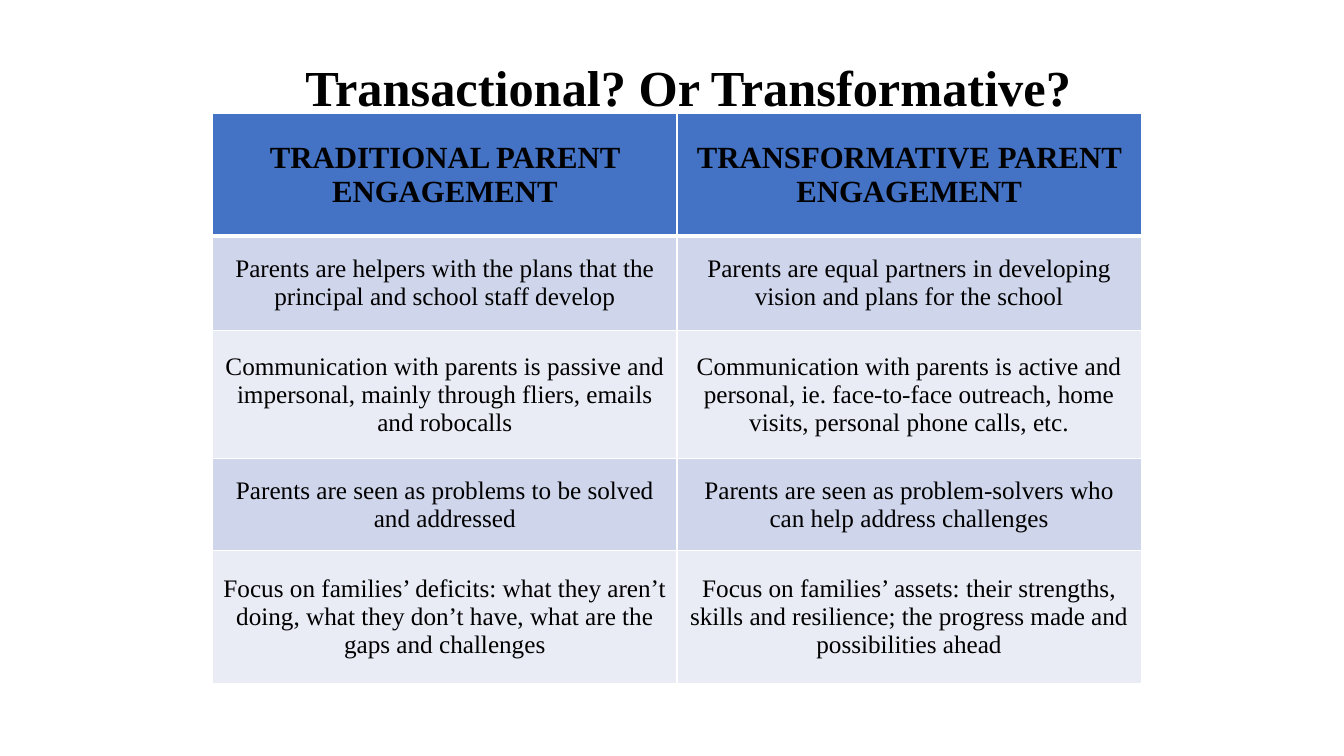
import dataclasses

import lxml.etree
import pptx
import pptx.dml.color
import pptx.enum.text
import pptx.oxml.ns
import pptx.util

Cm = pptx.util.Cm
Align = pptx.enum.text.PP_ALIGN
Anchor = pptx.enum.text.MSO_ANCHOR


@dataclasses.dataclass(frozen=True)
class Theme:
    font: str = "Times New Roman"
    ink: str = "000000"
    head: str = "4472C4"
    bands: tuple[str, str] = ("CFD5EA", "E9EBF5")
    rule: str = "FFFFFF"
    thin: int = 1
    thick: int = 3
    title: int = 36
    label: int = 22
    text: int = 18


@dataclasses.dataclass(frozen=True)
class Row:
    left: str
    right: str
    height: float  # centimetres


THEME = Theme()

ROWS = [
    Row("TRADITIONAL PARENT ENGAGEMENT",
        "TRANSFORMATIVE PARENT ENGAGEMENT", 3.07),
    Row("Parents are helpers with the plans that the principal and school staff develop",
        "Parents are equal partners in developing vision and plans for the school", 2.39),
    Row("Communication with parents is passive and impersonal, mainly through fliers, "
        "emails and robocalls",
        "Communication with parents is active and personal, ie. face-to-face outreach, "
        "home visits, personal phone calls, etc.", 3.23),
    Row("Parents are seen as problems to be solved and addressed",
        "Parents are seen as problem-solvers who can help address challenges", 2.31),
    Row("Focus on families’ deficits: what they aren’t doing, what they don’t have, "
        "what are the gaps and challenges",
        "Focus on families’ assets: their strengths, skills and resilience; "
        "the progress made and possibilities ahead", 3.35),
]


def style(frame, size: int, bold: bool, align: Align) -> None:
    """Format every paragraph and run of a text frame."""
    for para in frame.paragraphs:
        para.alignment = align
        for run in para.runs:
            run.font.name = THEME.font
            run.font.size = pptx.util.Pt(size)
            run.font.bold = bold
            run.font.color.rgb = pptx.dml.color.RGBColor.from_string(THEME.ink)


def border(cell, top: int, base: int) -> None:
    """Rule the four sides of a cell; widths are in points."""
    props = cell._tc.get_or_add_tcPr()
    sides = {"lnL": THEME.thin, "lnR": THEME.thin, "lnT": top, "lnB": base}
    for spot, (side, width) in enumerate(sides.items()):
        line = lxml.etree.Element(pptx.oxml.ns.qn(f"a:{side}"),
                                  w=str(pptx.util.Pt(width)))
        fill = lxml.etree.SubElement(line, pptx.oxml.ns.qn("a:solidFill"))
        lxml.etree.SubElement(fill, pptx.oxml.ns.qn("a:srgbClr"), val=THEME.rule)
        props.insert(spot, line)


def add_title(slide, text: str) -> None:
    title = slide.shapes.title
    title.left, title.top = Cm(7.44), Cm(0.69)
    title.width, title.height = Cm(21.74), Cm(3.18)
    frame = title.text_frame
    frame.text = text
    frame.word_wrap = True
    frame.vertical_anchor = Anchor.MIDDLE
    frame.paragraphs[0].line_spacing = 0.9
    style(frame, THEME.title, True, Align.LEFT)


def add_grid(slide, rows: list[Row]) -> None:
    high = sum(row.height for row in rows)
    grid = slide.shapes.add_table(len(rows), 2, Cm(5.36), Cm(2.87),
                                  Cm(23.4), Cm(high)).table
    for y, row in enumerate(rows):
        grid.rows[y].height = Cm(row.height)
        first = y == 0
        shade = THEME.head if first else THEME.bands[(y - 1) % 2]
        size = THEME.label if first else THEME.text
        for x, text in enumerate((row.left, row.right)):
            cell = grid.cell(y, x)
            cell.text_frame.text = text
            cell.vertical_anchor = Anchor.MIDDLE
            style(cell.text_frame, size, first, Align.CENTER)
            cell.fill.solid()
            cell.fill.fore_color.rgb = pptx.dml.color.RGBColor.from_string(shade)
            border(cell, THEME.thick if y == 1 else THEME.thin,
                   THEME.thick if first else THEME.thin)


def main() -> None:
    # Slide with a title only
    deck = pptx.Presentation()
    deck.slide_width, deck.slide_height = Cm(33.87), Cm(19.05)
    slide = deck.slides.add_slide(deck.slide_layouts[5])

    # Title and table
    add_title(slide, "Transactional? Or Transformative?")
    add_grid(slide, ROWS)
    deck.save("out.pptx")


if __name__ == "__main__":
    main()
